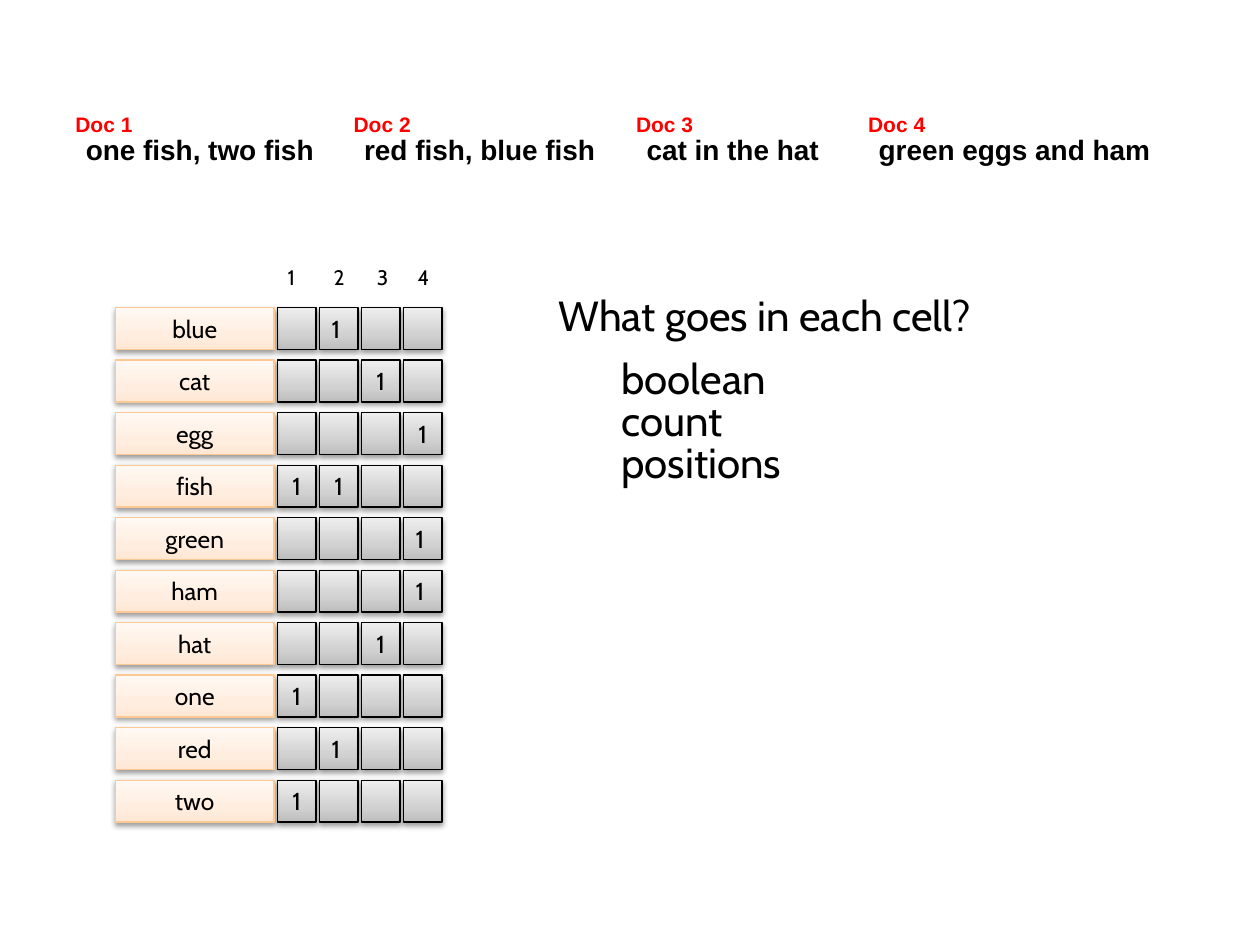
"""Build the term-document matrix slide."""
import copy

from lxml import etree
from pptx import Presentation, util as u
from pptx.dml import color
from pptx.enum import shapes, text
from pptx.oxml import ns

PX = 7620
COLORS = {"black": "000000", "doc": "FF0000", "term_line": "FCC893"}
GRADIENTS = {
    "cell": ["BDBDBD", "D1D1D1", "EEEEEE"],
    "term": ["FFE7D4", "FFEEE0", "FFF8F3"],
}
DOCS = [
    (60, 245, "one fish, two fish"),
    (325, 247, "red fish, blue fish"),
    (594, 191, "cat in the hat"),
    (815, 286, "green eggs and ham"),
]
HEADER_LEFTS = [262, 306, 347, 386]
POSTINGS = {
    "blue": [2], "cat": [3], "egg": [4], "fish": [1, 2], "green": [4],
    "ham": [4], "hat": [3], "one": [1], "red": [2], "two": [1],
}
LEFT_ALIGNED = {"blue", "green", "ham", "red"}
OPTIONS = ["boolean", "count", "positions"]
TOP, ROW, COL = 293, 50, 40


def rgb(name):
    return color.RGBColor.from_string(COLORS.get(name, name))


class Deck:
    """Holds the style and the current slide."""

    font = "Cabin"
    doc_font = "Arial"

    def __init__(self, width, height):
        self.prs = Presentation()
        self.prs.slide_width, self.prs.slide_height = width * PX, height * PX
        self.s = self.prs.slides.add_slide(self.prs.slide_layouts[6])

    def set_text(self, tf, words, size, fill="black", font=None, bold=False):
        p = tf.paragraphs[0]
        p.text = words
        for r in p.runs:
            r.font.size, r.font.name, r.font.bold = u.Pt(size), font or self.font, bold
            r.font.color.rgb = rgb(fill)
        return p

    def label(self, box, words, size, wrap=False, parent=None, **style):
        sp = (parent or self.s).shapes.add_textbox(*(v * PX for v in box))
        tf = sp.text_frame
        tf.word_wrap = wrap
        tf.auto_size = text.MSO_AUTO_SIZE.SHAPE_TO_FIT_TEXT
        self.set_text(tf, words, size, **style)

    def doc(self, number, x, width, words):
        group = self.s.shapes.add_group_shape()
        style = {"parent": group, "font": self.doc_font, "bold": True}
        self.label((x + 10, 120, width, 44), words, 16, **style)
        self.label((x, 100, 79, 36), f"Doc {number}", 12, fill="doc", **style)

    def tile(self, box, gradient, line, words="", align=text.PP_ALIGN.CENTER):
        sp = self.s.shapes.add_shape(shapes.MSO_SHAPE.RECTANGLE, *(v * PX for v in box))
        self.shade(sp, GRADIENTS[gradient])
        sp.line.color.rgb, sp.line.width = rgb(line), u.Pt(0.75)
        self.cast_shadow(sp)
        tf = sp.text_frame
        tf.word_wrap = False
        tf.vertical_anchor = text.MSO_ANCHOR.MIDDLE
        if words:
            self.set_text(tf, words, 14).alignment = align

    def shade(self, sp, hexes):
        sp.fill.gradient()
        sp.fill.gradient_angle = 90
        stops = sp._element.spPr.find(".//" + ns.qn("a:gsLst"))
        stops.insert(1, copy.deepcopy(stops[0]))
        for stop, position, value in zip(sp.fill.gradient_stops, (0, 0.35, 1), hexes):
            stop.position, stop.color.rgb = position, rgb(value)

    def cast_shadow(self, sp):
        sp.shadow.inherit = False
        effects = sp._element.spPr.find(ns.qn("a:effectLst"))
        shadow = etree.SubElement(effects, ns.qn("a:outerShdw"), blurRad="40000",
                                  dist="20000", dir="5400000", rotWithShape="0")
        tint = etree.SubElement(shadow, ns.qn("a:srgbClr"), val=COLORS["black"])
        etree.SubElement(tint, ns.qn("a:alpha"), val="38000")


def main():
    deck = Deck(1200, 900)
    for number, (x, width, words) in enumerate(DOCS, 1):
        deck.doc(number, x, width, words)
    for number, x in enumerate(HEADER_LEFTS, 1):
        deck.label((x, 246, 35, 36), str(number), 12)
    for row, (term, docs) in enumerate(POSTINGS.items()):
        y = TOP + row * ROW
        align = text.PP_ALIGN.LEFT if term in LEFT_ALIGNED else text.PP_ALIGN.CENTER
        for col in range(len(DOCS)):
            mark = "1" if col + 1 in docs else ""
            deck.tile((264 + col * COL, y, 37, 40), "cell", "black", mark, align)
        deck.tile((110, y, 151, 40), "term", "term_line", term)
    deck.label((520, 270, 590, 60), "What goes in each cell?", 24, wrap=True)
    for i, option in enumerate(OPTIONS):
        deck.label((580, 330 + i * 40, 190, 60), option, 24, wrap=True)
    deck.prs.save("out.pptx")


if __name__ == "__main__":
    main()
